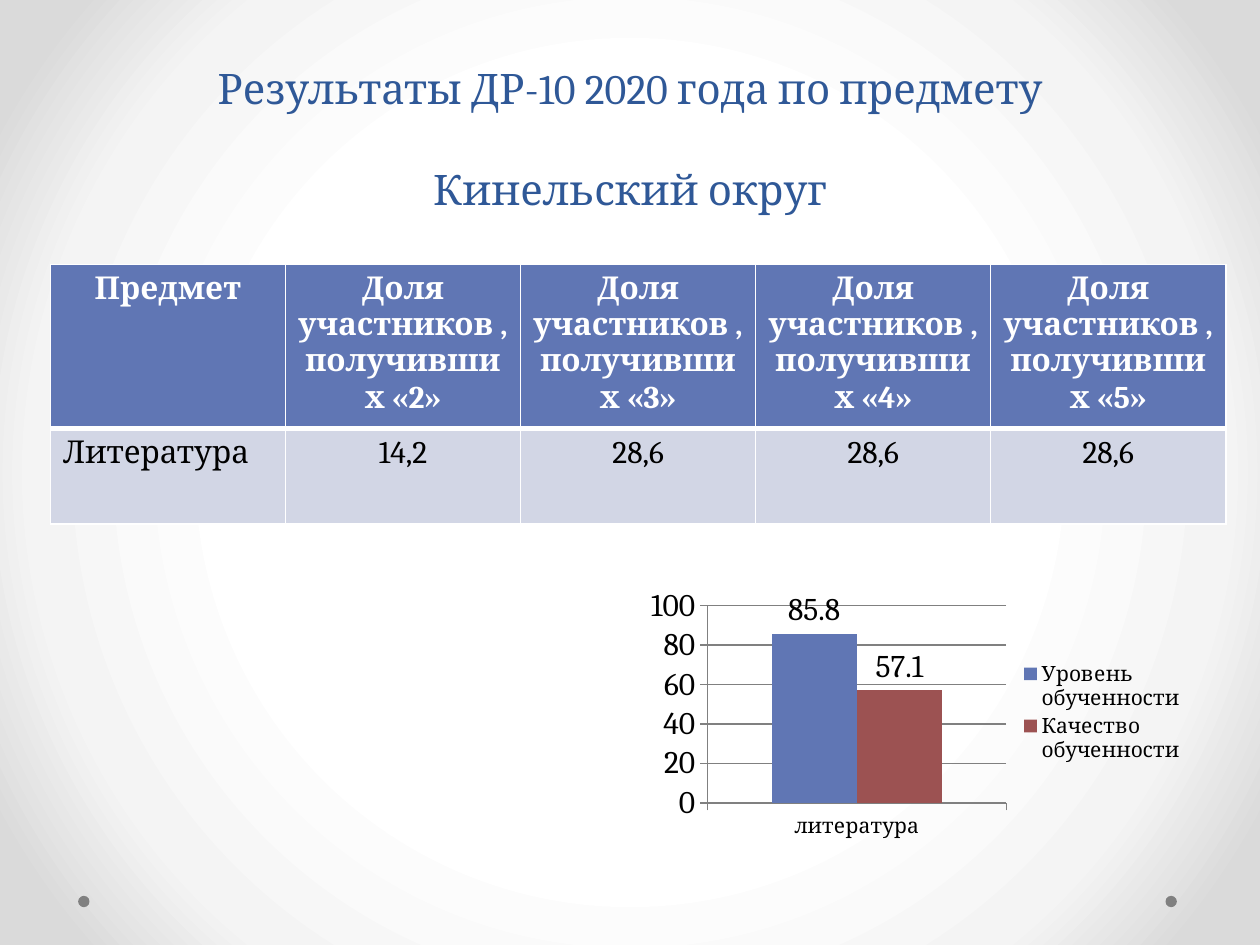
from lxml import etree
from pptx import Presentation
from pptx.chart.data import CategoryChartData
from pptx.dml.color import RGBColor
from pptx.enum.chart import XL_CHART_TYPE, XL_LABEL_POSITION, XL_LEGEND_POSITION, XL_TICK_MARK
from pptx.enum.shapes import MSO_SHAPE
from pptx.enum.text import MSO_ANCHOR, PP_ALIGN
from pptx.oxml import parse_xml
from pptx.oxml.ns import nsdecls, qn
from pptx.util import Inches, Pt

COLUMN = XL_CHART_TYPE.COLUMN_CLUSTERED
ABOVE = XL_LABEL_POSITION.OUTSIDE_END
RIGHT = XL_LEGEND_POSITION.RIGHT
OUT, NONE = XL_TICK_MARK.OUTSIDE, XL_TICK_MARK.NONE
OVAL = MSO_SHAPE.OVAL
BOTTOM = MSO_ANCHOR.BOTTOM
LEFT, CENTER = PP_ALIGN.LEFT, PP_ALIGN.CENTER

FONT = "Cambria"
HEX = {"title": "2F5897", "blue": "6076B4", "red": "9C5252", "pale": "D2D6E5",
       "white": "FFFFFF", "black": "000000", "gray": "808080"}
GLOW = [(50, "FFFFFF"), (76, "F4F4F4"), (92, "DADADA")]

TITLE = "Результаты ДР-10 2020 года по предмету\vКинельский округ"
ROWS = [
    ["Предмет"] + [f"Доля участников , получивших «{mark}»" for mark in range(2, 6)],
    ["Литература", "14,2", "28,6", "28,6", "28,6"],
]
SUBJECT = "литература"
SERIES = [("Уровень обученности", 85.8, "blue"),
          ("Качество обученности", 57.1, "red")]

WIDE, HIGH = 10, 7.5
HEIGHTS = [1.05, 0.76]
TABLE = (0.4, 2.1, 9.33, sum(HEIGHTS))
CHART = (5.08, 4.62, 4.42, 2.08)
DOT, DOT_TOP, DOT_LEFTS = 0.09, 7.11, (0.62, 9.25)


def rgb(name):
    return RGBColor.from_string(HEX[name])


def inches(box):
    return [Inches(n) for n in box]


def style(font, size, color="black", bold=False):
    font.name, font.size, font.bold = FONT, Pt(size), bold
    font.color.rgb = rgb(color)


def write(frame, text, size=18, color="black", bold=False, align=CENTER, lead=None):
    par = frame.paragraphs[0]
    par.text, par.alignment = text, align
    if lead:
        par.line_spacing = Pt(lead)
    for run in par.runs:
        style(run.font, size, color, bold)


def glow(slide):
    """Fill the background with a round gradient from the centre."""
    slide.background.fill.gradient()
    old = slide.element.find(".//" + qn("a:gradFill"))
    stops = "".join(f'<a:gs pos="{pos * 1000}"><a:srgbClr val="{color}"/></a:gs>'
                    for pos, color in GLOW)
    new = parse_xml(
        f'<a:gradFill {nsdecls("a")} rotWithShape="1"><a:gsLst>{stops}</a:gsLst>'
        '<a:path path="circle"><a:fillToRect l="50000" t="50000" r="50000" b="50000"/>'
        '</a:path></a:gradFill>')
    old.getparent().replace(old, new)


def edge(cell, **widths):
    """Draw white borders; XML order puts them before the fill."""
    props = cell._tc.get_or_add_tcPr()
    for spot, (side, width) in enumerate(widths.items()):
        line = etree.Element(qn(f"a:ln{side}"), w=str(Pt(width)))
        fill = etree.SubElement(line, qn("a:solidFill"))
        etree.SubElement(fill, qn("a:srgbClr"), val=HEX["white"])
        props.insert(spot, line)


def add_grid(slide):
    grid = slide.shapes.add_table(len(ROWS), len(ROWS[0]), *inches(TABLE)).table
    for col in grid.columns:
        col.width = Inches(TABLE[2] / len(ROWS[0]))
    for r, row in enumerate(ROWS):
        grid.rows[r].height = Inches(HEIGHTS[r])
        head = r == 0
        for c, text in enumerate(row):
            cell = grid.cell(r, c)
            cell.fill.solid()
            cell.fill.fore_color.rgb = rgb("blue" if head else "pale")
            write(cell.text_frame, text, bold=head, color="white" if head else "black",
                  align=CENTER if head or c else LEFT)
            edge(cell, L=1, R=1, T=1 if head else 3, B=3 if head else 1)


def add_bars(slide):
    data = CategoryChartData()
    data.categories = [SUBJECT]
    for name, value, _ in SERIES:
        data.add_series(name, [value])
    chart = slide.shapes.add_chart(COLUMN, *inches(CHART), data).chart
    style(chart.font, 18)
    chart.has_title = False
    chart.has_legend = True
    chart.legend.position = RIGHT
    chart.legend.include_in_layout = False
    style(chart.legend.font, 12)

    cat, val = chart.category_axis, chart.value_axis
    style(cat.tick_labels.font, 12)
    val.minimum_scale, val.maximum_scale, val.major_unit = 0, 100, 20
    val.has_major_gridlines = True
    for axis in (cat, val):
        axis.major_tick_mark, axis.minor_tick_mark = OUT, NONE
    for part in (cat, val, val.major_gridlines):
        part.format.line.color.rgb = rgb("gray")
        part.format.line.width = Pt(0.75)

    plot = chart.plots[0]
    plot.gap_width, plot.overlap, plot.vary_by_categories = 150, 0, False
    for bar, (_, _, color) in zip(plot.series, SERIES):
        bar.format.fill.solid()
        bar.format.fill.fore_color.rgb = rgb(color)
        bar.data_labels.show_value = True
        bar.data_labels.position = ABOVE
        style(bar.data_labels.font, 18)


def main():
    deck = Presentation()
    deck.slide_width, deck.slide_height = Inches(WIDE), Inches(HIGH)
    slide = deck.slides.add_slide(deck.slide_layouts[6])
    glow(slide)

    for left in DOT_LEFTS:
        dot = slide.shapes.add_shape(OVAL, *inches((left, DOT_TOP, DOT, DOT)))
        dot.shadow.inherit = False
        dot.fill.solid()
        dot.fill.fore_color.rgb = rgb("gray")
        dot.line.fill.background()

    frame = slide.shapes.add_textbox(*inches((0.5, 0, WIDE - 1, 1.75))).text_frame
    frame.word_wrap, frame.vertical_anchor = True, BOTTOM
    write(frame, TITLE, size=24, color="title", lead=58)

    add_bars(slide)
    add_grid(slide)
    deck.save("out.pptx")


if __name__ == "__main__":
    main()
